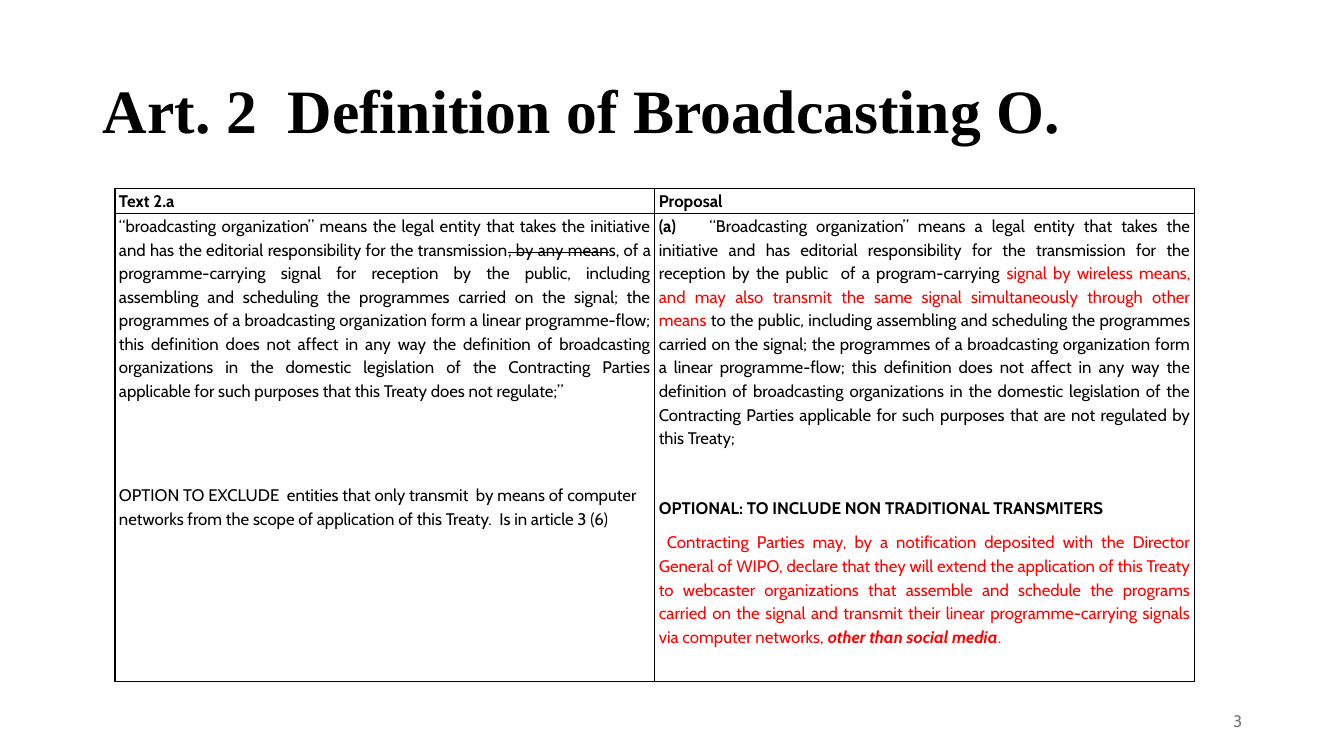
from pptx import Presentation
from pptx.dml.color import RGBColor
from pptx.enum.text import MSO_ANCHOR as Anchor, MSO_AUTO_SIZE as AutoSize, PP_ALIGN as Align
from pptx.oxml import parse_xml
from pptx.oxml.ns import nsdecls
from pptx.util import Inches, Pt

WIDTH, HEIGHT = 13.33, 7.5
BLACK, RED, GREY = "000000", "FF0000", "797979"
BODY_FONT, TITLE_FONT = "Cabin", "Times New Roman"
LINE_GAP = 24.8  # points taken by one skipped line

# Each paragraph: alignment, skipped lines before it, spans of (text, marks).
# Marks: b bold, i italic, s struck through, r red.
HEADINGS = [
    [(Align.LEFT, 0, [("Text 2.a", "b")])],
    [(Align.LEFT, 0, [("Proposal", "b")])],
]
TREATY_TEXT = [
    (Align.JUSTIFY, 0, [
        ("“broadcasting organization” means the legal entity that takes the initiative and has "
         "the editorial responsibility for the transmission", ""),
        (", by any mean", "s"),
        ("s, of a programme-carrying signal for reception by the public, including assembling "
         "and scheduling the programmes carried on the signal; the programmes of a broadcasting "
         "organization form a linear programme-flow; this definition does not affect in any way "
         "the definition of broadcasting organizations in the domestic legislation of the "
         "Contracting Parties applicable for such purposes that this Treaty does not "
         "regulate;”", ""),
    ]),
    (Align.LEFT, 2, [
        ("OPTION TO EXCLUDE  entities that only transmit  by means of computer networks from "
         "the scope of application of this Treaty.  Is in article 3 (6)", ""),
    ]),
]
PROPOSAL_TEXT = [
    (Align.JUSTIFY, 0, [
        ("(a)\t", "b"),
        ("“Broadcasting organization” means a legal entity that takes the initiative and has "
         "editorial responsibility for the transmission for the reception by the public  of a "
         "program-carrying ", ""),
        ("signal by wireless means, and may also transmit the same signal simultaneously "
         "through other means ", "r"),
        ("to the public, including assembling and scheduling the programmes carried on the "
         "signal; the programmes of a broadcasting organization form a linear programme-flow; "
         "this definition does not affect in any way the definition of broadcasting "
         "organizations in the domestic legislation of the Contracting Parties applicable for "
         "such purposes that are not regulated by this Treaty;", ""),
    ]),
    (Align.JUSTIFY, 1, [("OPTIONAL: TO INCLUDE NON TRADITIONAL TRANSMITERS", "b")]),
    (Align.JUSTIFY, 0, [
        (" Contracting Parties may, by a notification deposited with the Director General of "
         "WIPO, declare that they will extend the application of this Treaty to webcaster "
         "organizations that assemble and schedule the programs carried on the signal and "
         "transmit their linear programme-carrying signals via computer networks, ", "r"),
        ("other than social media", "bir"),
        (".", "r"),
    ]),
]


def color(hex_code):
    return RGBColor.from_string(hex_code)


def style(span, size, font=BODY_FONT, hex_code=BLACK, bold=False, italic=False):
    span.font.name, span.font.size = font, Pt(size)
    span.font.bold, span.font.italic = bold, italic
    span.font.color.rgb = color(hex_code)


def place(shape, box):
    shape.left, shape.top, shape.width, shape.height = [Inches(value) for value in box]


def add_title(page, box, text):
    title = page.shapes.title
    place(title, box)
    frame = title.text_frame
    frame.text = text
    frame.auto_size, frame.vertical_anchor = AutoSize.NONE, Anchor.MIDDLE
    para = frame.paragraphs[0]
    para.alignment, para.line_spacing = Align.LEFT, 0.9
    style(para.runs[0], 44, TITLE_FONT, bold=True)


def outline_cell(cell):
    cell.fill.background()
    properties = cell._tc.get_or_add_tcPr()
    for index, side in enumerate(("lnL", "lnR", "lnT", "lnB")):
        properties.insert(index, parse_xml(
            f'<a:{side} {nsdecls("a")} w="12700"><a:solidFill>'
            f'<a:srgbClr val="{BLACK}"/></a:solidFill></a:{side}>'))


def fill_cell(cell, paragraphs):
    cell.margin_left = cell.margin_right = Inches(0.04)
    cell.margin_top = cell.margin_bottom = 0
    frame = cell.text_frame
    for index, (alignment, skipped, spans) in enumerate(paragraphs):
        para = frame.add_paragraph() if index else frame.paragraphs[0]
        para.alignment, para.line_spacing = alignment, 1.15
        para.space_before, para.space_after = Pt(skipped * LINE_GAP), Pt(8)
        for text, marks in spans:
            span = para.add_run()
            span.text = text
            style(span, 12, hex_code=RED if "r" in marks else BLACK,
                  bold="b" in marks, italic="i" in marks)
            if "s" in marks:
                span._r.get_or_add_rPr().set("strike", "sngStrike")


def add_comparison(page, box, rows):
    left, top, width, height = box
    heading_height = 0.05 * height
    table = page.shapes.add_table(
        len(rows), 2, *[Inches(value) for value in box]).table
    table.first_row = table.horz_banding = False
    for column in table.columns:
        column.width = Inches(width / 2)
    for row, row_height in zip(table.rows, (heading_height, height - heading_height)):
        row.height = Inches(row_height)
    for row, contents in zip(table.rows, rows):
        for cell, paragraphs in zip(row.cells, contents):
            outline_cell(cell)
            fill_cell(cell, paragraphs)


def add_page_number(page, box, number):
    shape = page.shapes.add_textbox(*[Inches(value) for value in box])
    frame = shape.text_frame
    frame.word_wrap, frame.vertical_anchor = True, Anchor.MIDDLE
    frame.text = str(number)
    frame.paragraphs[0].alignment = Align.RIGHT
    style(frame.paragraphs[0].runs[0], 12, hex_code=GREY)


def main():
    deck = Presentation()
    deck.slide_width, deck.slide_height = Inches(WIDTH), Inches(HEIGHT)
    page = deck.slides.add_slide(deck.slide_layouts[5])
    add_title(page, (0.92, 0.4, 11.5, 1.45), "Art. 2  Definition of Broadcasting O.")
    add_comparison(page, (1.14, 1.87, 10.71, 4.89), [HEADINGS, [TREATY_TEXT, PROPOSAL_TEXT]])
    add_page_number(page, (9.42, 6.95, 3, 0.4), 3)
    deck.save("out.pptx")


if __name__ == "__main__":
    main()
